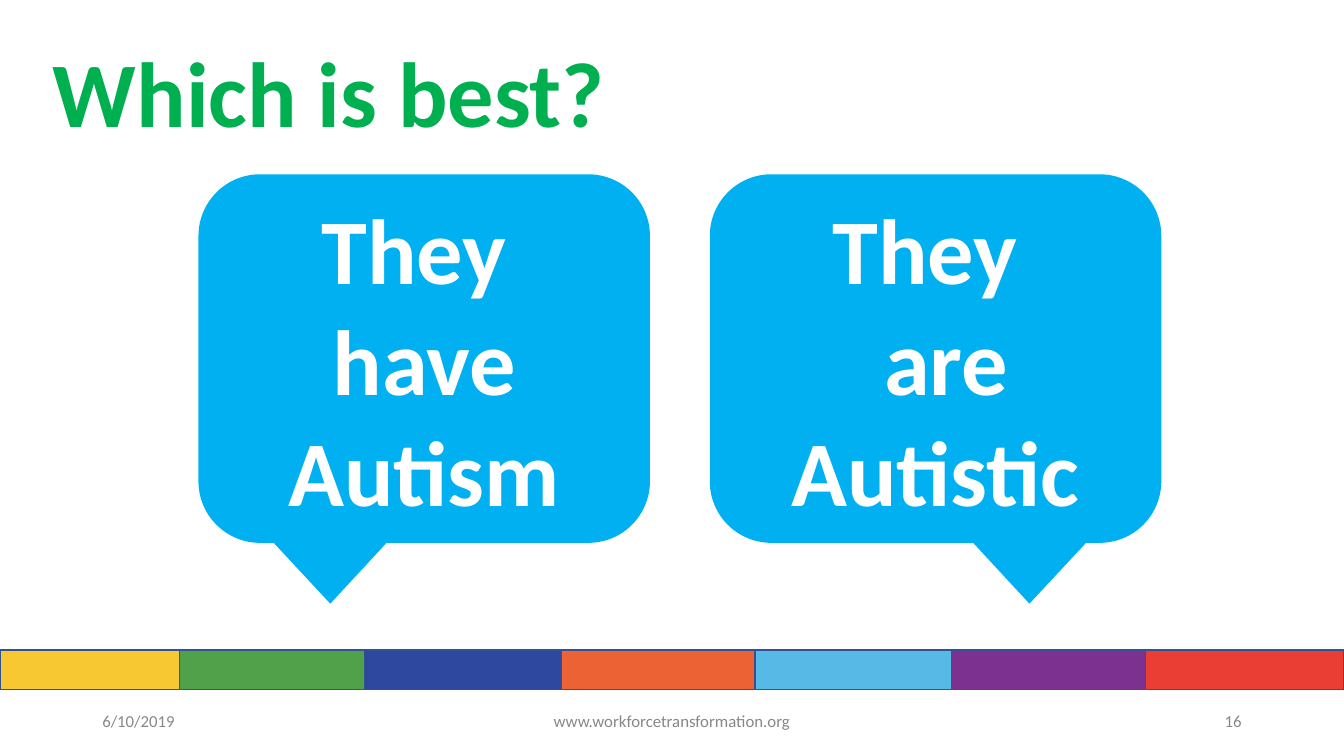
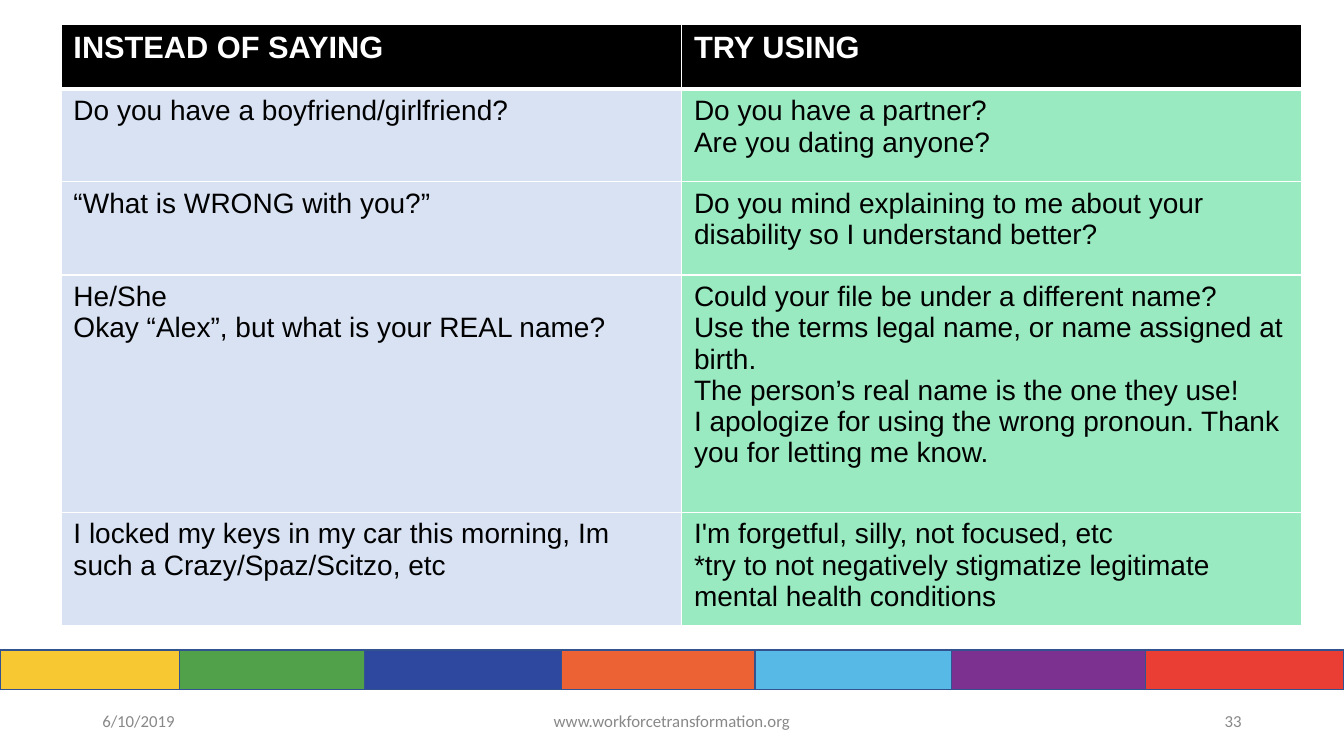
"""Build two slides on inclusive wording: a callout comparison and a phrase table."""
from dataclasses import dataclass
from typing import Any

import lxml.etree
import pptx
import pptx.dml.color
import pptx.enum.shapes
import pptx.enum.text
import pptx.oxml.ns
import pptx.util

RGBColor = pptx.dml.color.RGBColor
Align = pptx.enum.text.PP_ALIGN
Anchor = pptx.enum.text.MSO_ANCHOR
Preset = pptx.enum.shapes.MSO_SHAPE

EMU_PER_PX = 9525
PAGE_WIDTH, PAGE_HEIGHT = 1280, 720

WHITE = RGBColor(0xFF, 0xFF, 0xFF)
BLACK = RGBColor(0x00, 0x00, 0x00)
GREY = RGBColor(0x88, 0x88, 0x88)
TITLE_GREEN = RGBColor(0x00, 0xB0, 0x50)
CALLOUT_BLUE = RGBColor(0x00, 0xB0, 0xF0)
BAND_LINE = RGBColor(0x32, 0x53, 0x8F)
AVOID_BLUE = RGBColor(0xD8, 0xE2, 0xF3)
PREFER_GREEN = RGBColor(0x00, 0xCC, 0x66)
PREFER_OPACITY = 40

TITLE_FONT = {"name": "Calibri", "size": pptx.util.Pt(66), "bold": True}
FOOTER_FONT = {"name": "Calibri", "size": pptx.util.Pt(12)}
HEADER_FONT = {"name": "Arial", "size": pptx.util.Pt(22), "bold": True}
BODY_FONT = {"name": "Arial", "size": pptx.util.Pt(20), "bold": False}


@dataclass(frozen=True)
class Box:
    left: int
    top: int
    width: int
    height: int

    def emu(self) -> tuple[int, int, int, int]:
        """Return the four lengths in EMU."""
        return px(self.left), px(self.top), px(self.width), px(self.height)


@dataclass(frozen=True)
class BandPart:
    left: int
    color: RGBColor


@dataclass(frozen=True)
class Footer:
    left: int
    width: int
    align: Align
    text: str


@dataclass(frozen=True)
class Callout:
    left: int
    tail: float
    text: str


BAND_TOP, BAND_HEIGHT = 619, 38
BAND = [
    BandPart(0, RGBColor(0xF7, 0xC8, 0x32)),
    BandPart(171, RGBColor(0x51, 0xA1, 0x4B)),
    BandPart(347, RGBColor(0x2E, 0x47, 0x9F)),
    BandPart(535, RGBColor(0xEC, 0x62, 0x34)),
    BandPart(719, RGBColor(0x57, 0xB9, 0xE6)),
    BandPart(906, RGBColor(0x7C, 0x31, 0x90)),
    BandPart(1091, RGBColor(0xEA, 0x3E, 0x34)),
]
FOOTER_TOP, FOOTER_HEIGHT = 667, 38

TITLE_BOX = Box(41, 8, 1056, 169)
CALLOUT_TOP, CALLOUT_WIDTH, CALLOUT_HEIGHT = 166, 430, 351
CALLOUTS = [
    Callout(189, -0.208, "They \vhave\vAutism"),
    Callout(676, 0.208, "They \v are\vAutistic"),
]

TABLE_LEFT, TABLE_TOP, COLUMN_WIDTH = 58, 23, 591
ROW_HEIGHTS = [62, 88, 89, 226, 103]
PHRASES = [
    ("INSTEAD OF SAYING", "TRY USING"),
    ("Do you have a boyfriend/girlfriend?", "Do you have a partner?\nAre you dating anyone?"),
    (
        "“What is WRONG with you?”",
        "Do you mind explaining to me about your disability so I understand better?",
    ),
    (
        "He/She\nOkay “Alex”, but what is your REAL name?",
        "Could your file be under a different name?\n"
        "Use the terms legal name, or name assigned at birth.\n"
        "The person’s real name is the one they use! \v"
        "I apologize for using the wrong pronoun. Thank you for letting me know.",
    ),
    (
        "I locked my keys in my car this morning, Im such a Crazy/Spaz/Scitzo, etc",
        "I'm forgetful, silly, not focused, etc\n"
        "*try to not negatively stigmatize legitimate mental health conditions",
    ),
]


def px(length: int) -> int:
    """Turn px into EMU."""
    return pptx.util.Emu(length * EMU_PER_PX)


def set_values(target: Any, values: dict[str, Any]) -> None:
    """Set each named attribute on the target."""
    for name, value in values.items():
        setattr(target, name, value)


def write_text(
    frame: Any, text: str, font: dict[str, Any], color: RGBColor, align: Align = Align.LEFT
) -> None:
    """Fill a text frame with evenly formatted paragraphs."""
    frame.text = text
    frame.word_wrap = True
    for para in frame.paragraphs:
        para.alignment = align
        for span in para.runs:
            set_values(span.font, font)
            span.font.color.rgb = color


def add_text(
    page: Any, box: Box, text: str, font: dict[str, Any], color: RGBColor, align: Align = Align.LEFT
) -> Any:
    """Add a vertically centred text box and return its frame."""
    frame = page.shapes.add_textbox(*box.emu()).text_frame
    write_text(frame, text, font, color, align)
    frame.vertical_anchor = Anchor.MIDDLE
    return frame


def add_filled_shape(page: Any, preset: Preset, box: Box, color: RGBColor) -> Any:
    """Add a flat shape without an outline."""
    shape = page.shapes.add_shape(preset, *box.emu())
    shape.shadow.inherit = False
    shape.fill.solid()
    shape.fill.fore_color.rgb = color
    shape.line.fill.background()
    return shape


def add_page(deck: Any, number: int) -> Any:
    """Add a blank page with the colour band and footers."""
    page = deck.slides.add_slide(deck.slide_layouts[6])
    rights = [part.left for part in BAND[1:]] + [PAGE_WIDTH]
    for part, right in zip(BAND, rights):
        box = Box(part.left, BAND_TOP, right - part.left, BAND_HEIGHT)
        shape = add_filled_shape(page, Preset.RECTANGLE, box, part.color)
        shape.line.color.rgb = BAND_LINE
        shape.line.width = pptx.util.Pt(1)
    footers = [
        Footer(88, 288, Align.LEFT, "6/10/2019"),
        Footer(424, 432, Align.CENTER, "www.workforcetransformation.org"),
        Footer(904, 288, Align.RIGHT, str(number)),
    ]
    for footer in footers:
        box = Box(footer.left, FOOTER_TOP, footer.width, FOOTER_HEIGHT)
        add_text(page, box, footer.text, FOOTER_FONT, GREY, footer.align)
    return page


def add_callout(page: Any, callout: Callout) -> None:
    """Add a speech bubble holding its own text."""
    box = Box(callout.left, CALLOUT_TOP, CALLOUT_WIDTH, CALLOUT_HEIGHT)
    shape = add_filled_shape(page, Preset.ROUNDED_RECTANGULAR_CALLOUT, box, CALLOUT_BLUE)
    for index, value in enumerate((callout.tail, 0.665, 0.167)):
        shape.adjustments[index] = value
    frame = shape.text_frame
    write_text(frame, callout.text, TITLE_FONT, WHITE, Align.CENTER)
    set_values(frame, {"margin_top": 0, "margin_bottom": 0, "vertical_anchor": Anchor.MIDDLE})


def add_solid_fill(parent: Any, color: RGBColor) -> None:
    """Append a solid fill to an XML element."""
    fill = lxml.etree.SubElement(parent, pptx.oxml.ns.qn("a:solidFill"))
    lxml.etree.SubElement(fill, pptx.oxml.ns.qn("a:srgbClr"), val=str(color))


def set_borders(cell: Any, top: int, bottom: int) -> None:
    """Give a cell white borders with widths in points."""
    properties = cell._tc.get_or_add_tcPr()
    widths = {"a:lnL": 1, "a:lnR": 1, "a:lnT": top, "a:lnB": bottom}
    for index, (tag, width) in enumerate(widths.items()):
        line = lxml.etree.Element(pptx.oxml.ns.qn(tag), w=str(pptx.util.Pt(width)))
        add_solid_fill(line, WHITE)
        properties.insert(index, line)


def fill_cell(cell: Any, color: RGBColor, opacity: int = 100) -> None:
    """Fill a cell, letting the page show through below full opacity."""
    cell.fill.solid()
    cell.fill.fore_color.rgb = color
    if opacity < 100:
        swatch = cell._tc.tcPr.find(".//" + pptx.oxml.ns.qn("a:srgbClr"))
        lxml.etree.SubElement(swatch, pptx.oxml.ns.qn("a:alpha"), val=str(opacity * 1000))


def add_phrase_table(page: Any) -> None:
    """Add the table of phrases to avoid and to prefer."""
    box = Box(TABLE_LEFT, TABLE_TOP, 2 * COLUMN_WIDTH, sum(ROW_HEIGHTS))
    table = page.shapes.add_table(len(PHRASES), 2, *box.emu()).table
    table.horz_banding = False
    for column in table.columns:
        column.width = px(COLUMN_WIDTH)
    margins = {
        "margin_left": px(12), "margin_right": px(12),
        "margin_top": px(6), "margin_bottom": px(6),
    }
    for row_index, phrases in enumerate(PHRASES):
        table.rows[row_index].height = px(ROW_HEIGHTS[row_index])
        header = row_index == 0
        fills = [(BLACK,), (BLACK,)] if header else [(AVOID_BLUE,), (PREFER_GREEN, PREFER_OPACITY)]
        for column_index, text in enumerate(phrases):
            cell = table.cell(row_index, column_index)
            set_values(cell, margins)
            font, color = (HEADER_FONT, WHITE) if header else (BODY_FONT, BLACK)
            write_text(cell.text_frame, text, font, color)
            fill_cell(cell, *fills[column_index])
            set_borders(cell, 3 if row_index == 1 else 1, 3 if header else 1)


def main() -> None:
    """Build and save the deck."""
    deck = pptx.Presentation()
    set_values(deck, {"slide_width": px(PAGE_WIDTH), "slide_height": px(PAGE_HEIGHT)})

    page = add_page(deck, 16)
    title = add_text(page, TITLE_BOX, "Which is best?", TITLE_FONT, TITLE_GREEN)
    title.paragraphs[0].line_spacing = 0.9
    for callout in CALLOUTS:
        add_callout(page, callout)

    add_phrase_table(add_page(deck, 33))
    deck.save("out.pptx")


if __name__ == "__main__":
    main()
